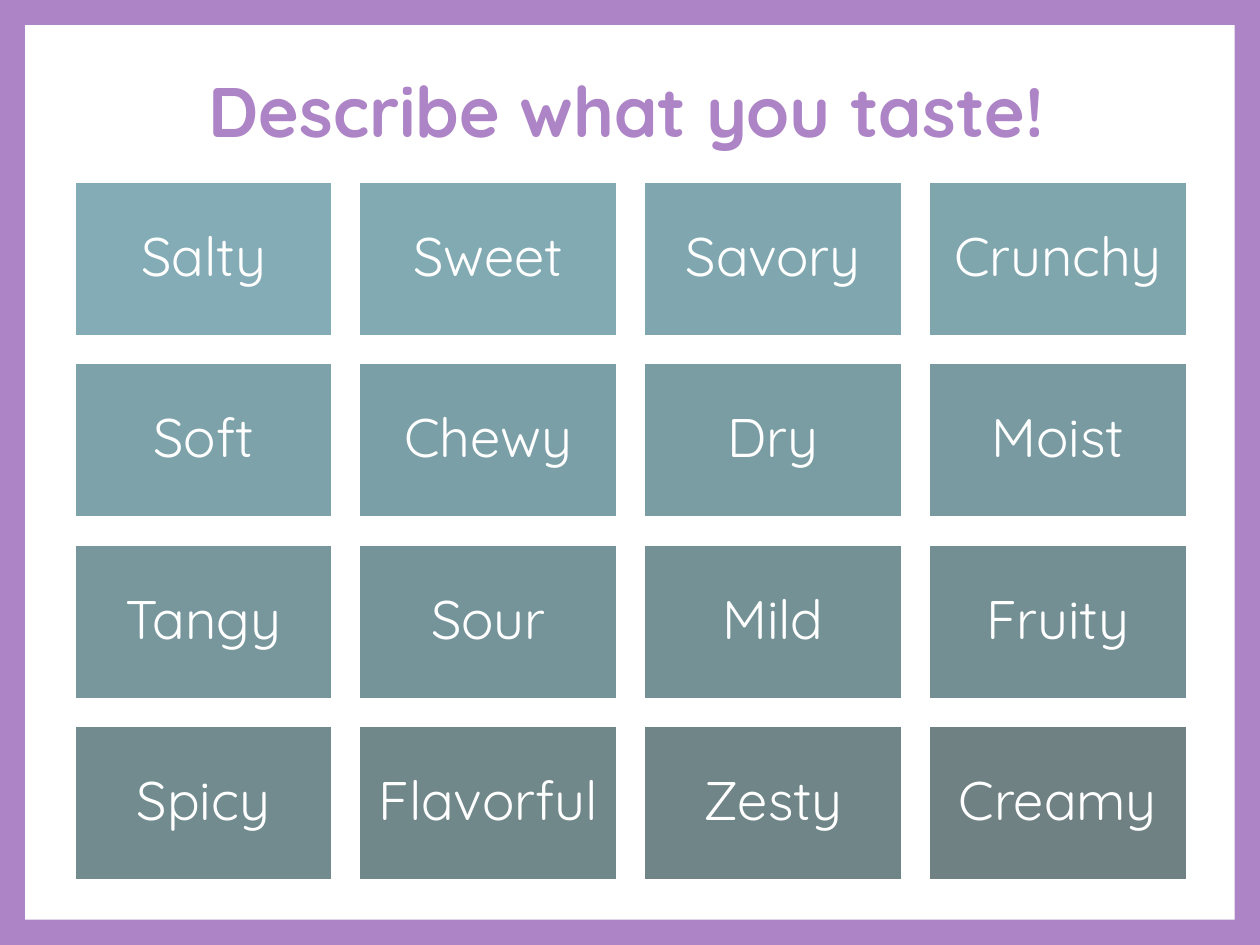
from pptx import Presentation
from pptx.dml.color import RGBColor
from pptx.enum.shapes import MSO_SHAPE
from pptx.enum.text import MSO_ANCHOR, PP_ALIGN
from pptx.util import Inches, Pt

PURPLE = "AD84C6"
WHITE = "FFFFFF"
TASTES = [
    [("Salty", "84ACB6"), ("Sweet", "82AAB3"), ("Savory", "80A7B0"), ("Crunchy", "7FA5AD")],
    [("Soft", "7DA2AA"), ("Chewy", "7B9FA7"), ("Dry", "7A9DA4"), ("Moist", "789AA0")],
    [("Tangy", "77979D"), ("Sour", "75949A"), ("Mild", "749296"), ("Fruity", "738F93")],
    [("Spicy", "718B8F"), ("Flavorful", "71888B"), ("Zesty", "708587"), ("Creamy", "6F8183")],
]
GRID_LEFT, GRID_TOP = 0.59, 1.44
CARD_WIDTH, CARD_HEIGHT = 2.05, 1.23
COLUMN_STEP, ROW_STEP = 2.26, 1.44


def set_fill(fill, color):
    fill.solid()
    fill.fore_color.rgb = RGBColor.from_string(color)


def set_text(shape, text, size, color, bold=False):
    """Write one centred line of text in the middle of the shape."""
    frame = shape.text_frame
    frame.text = text
    frame.word_wrap = True
    frame.vertical_anchor = MSO_ANCHOR.MIDDLE
    paragraph = frame.paragraphs[0]
    paragraph.alignment = PP_ALIGN.CENTER
    paragraph.line_spacing = 0.9
    font = paragraph.runs[0].font
    font.name = "Quicksand"
    font.size = Pt(size)
    font.bold = bold
    font.color.rgb = RGBColor.from_string(color)


presentation = Presentation()
presentation.slide_width = Inches(10)
presentation.slide_height = Inches(7.5)
slide = presentation.slides.add_slide(presentation.slide_layouts[6])
set_fill(slide.background.fill, PURPLE)

panel = slide.shapes.add_shape(
    MSO_SHAPE.RECTANGLE, Inches(0.2), Inches(0.2), Inches(9.6), Inches(7.1))
panel.shadow.inherit = False
set_fill(panel.fill, WHITE)
panel.line.fill.background()

title = slide.shapes.add_textbox(Inches(0.92), Inches(0.17), Inches(8.1), Inches(1.48))
set_text(title, "Describe what you taste!", 40, PURPLE, bold=True)

for row, tastes in enumerate(TASTES):
    for column, (taste, color) in enumerate(tastes):
        card = slide.shapes.add_shape(
            MSO_SHAPE.RECTANGLE,
            Inches(GRID_LEFT + column * COLUMN_STEP),
            Inches(GRID_TOP + row * ROW_STEP),
            Inches(CARD_WIDTH), Inches(CARD_HEIGHT))
        card.shadow.inherit = False
        set_fill(card.fill, color)
        set_fill(card.line.fill, WHITE)
        card.line.width = Pt(1.5)
        frame = card.text_frame
        frame.margin_left = frame.margin_right = Inches(0.13)
        frame.margin_top = frame.margin_bottom = Inches(0.13)
        set_text(card, taste, 31, WHITE)

presentation.save("out.pptx")
